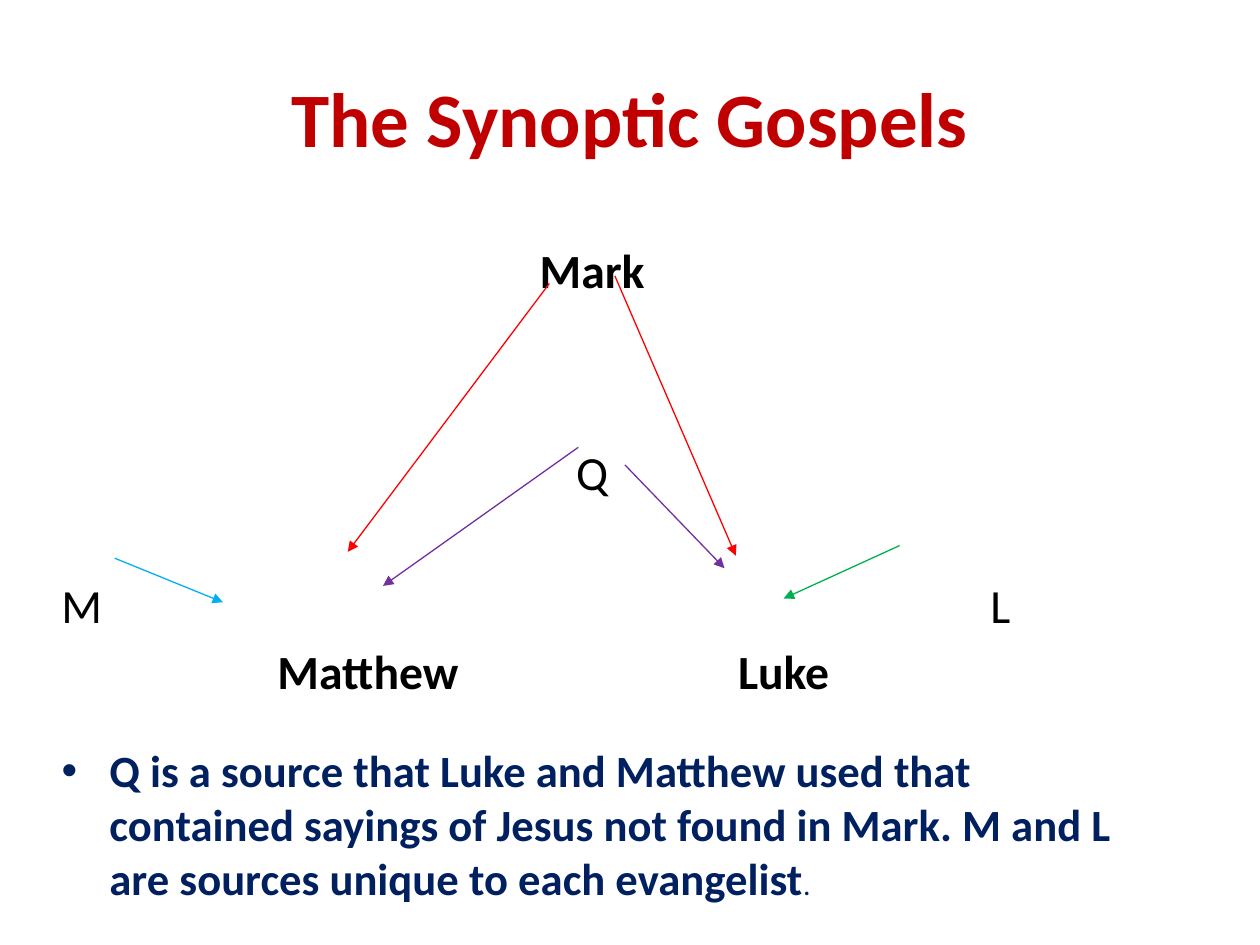
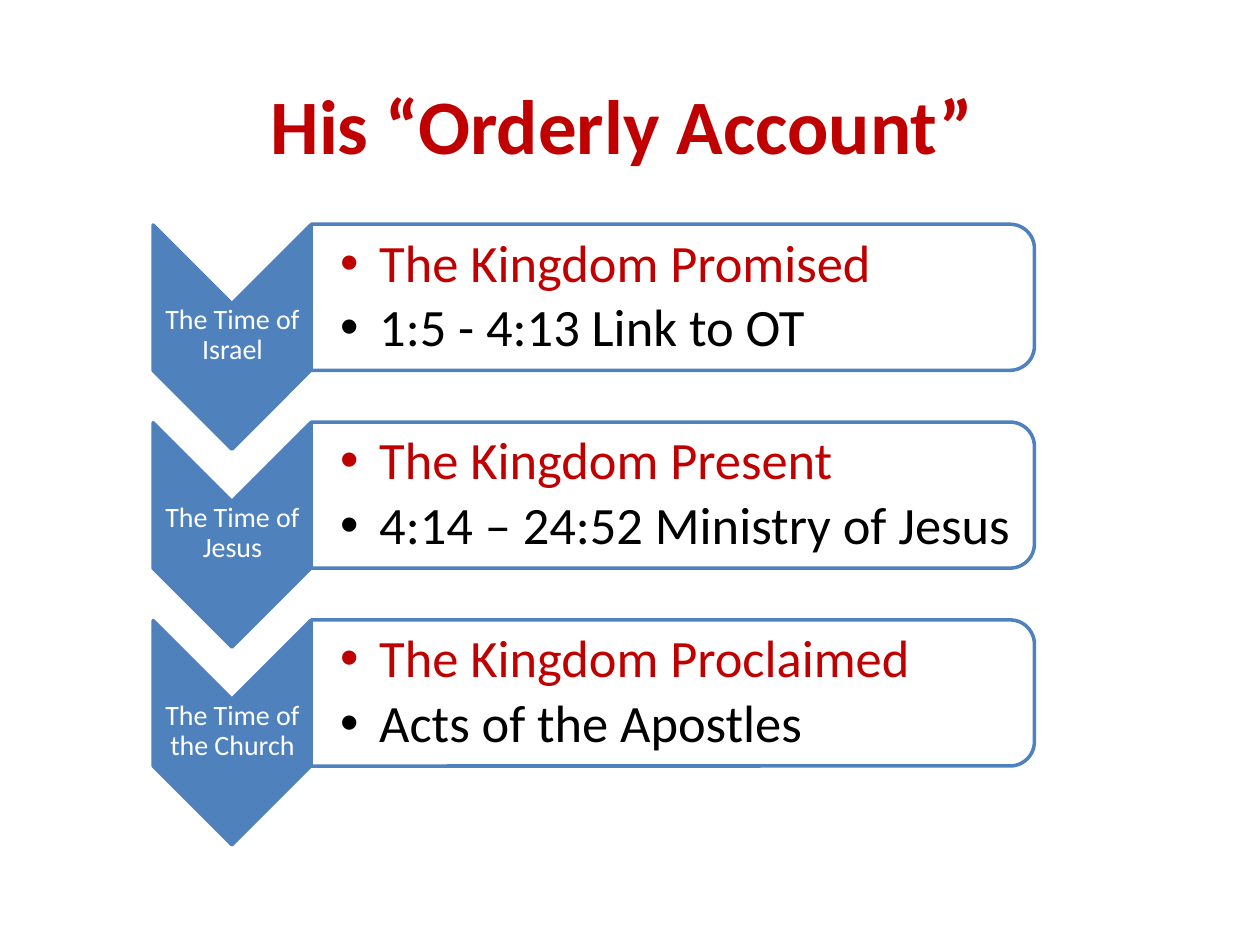
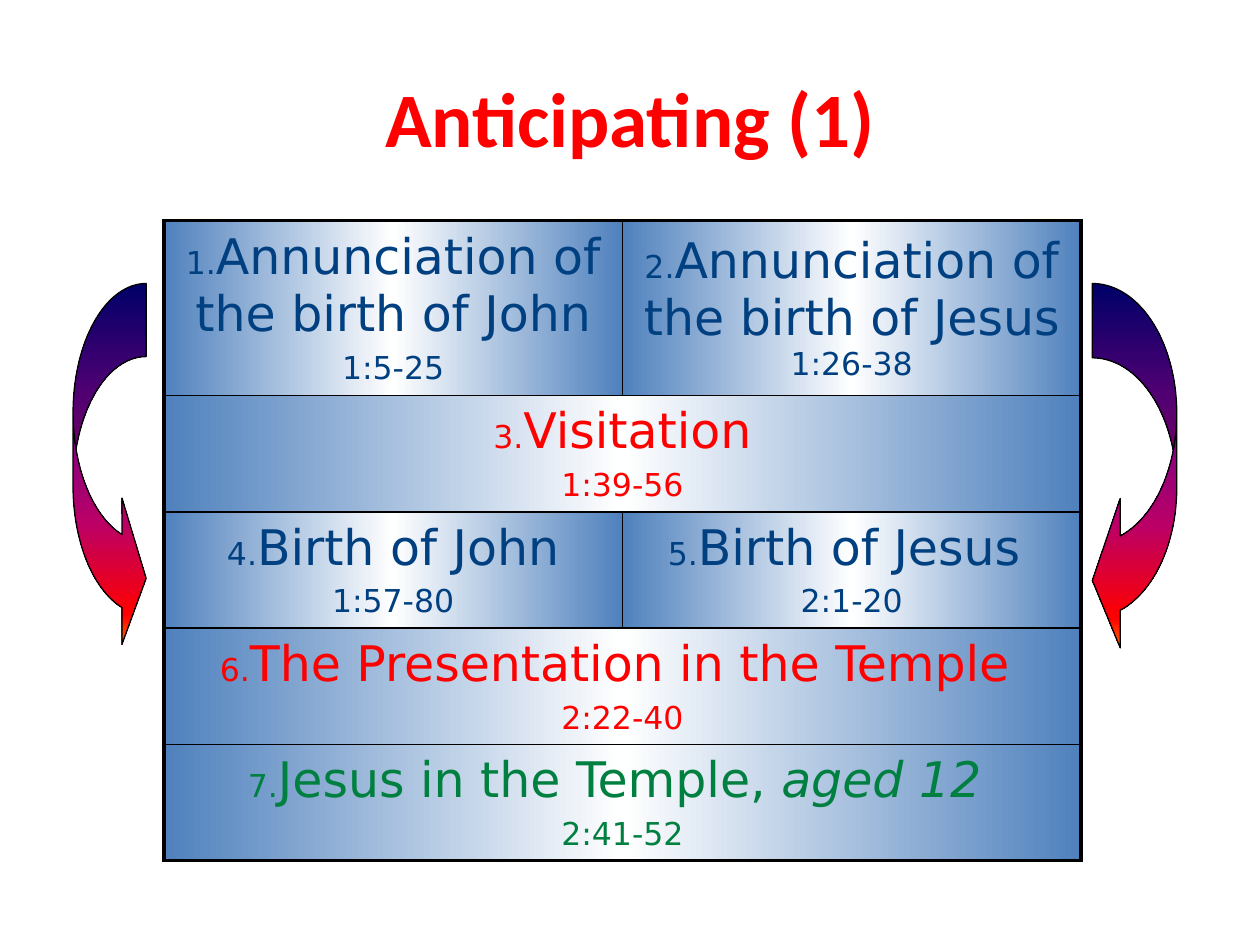
from lxml import etree
from pptx import Presentation
from pptx.dml.color import RGBColor
from pptx.enum import shapes, text
from pptx.oxml import ns
from pptx.util import Inches, Pt

HUES = {
    "title": "C00000", "red": "FF0000", "black": "000000", "white": "FFFFFF",
    "navy": "002060", "violet": "7030A0", "sky": "00B0F0", "leaf": "00B050",
    "blue": "4F81BD", "ink": "004080", "green": "008040",
}
SHEEN = [(0, HUES["blue"]), (50, HUES["white"]), (100, HUES["blue"])]
BLAZE = [(0, "000082"), (30, "66008F"), (65, "BA0066"), (90, "FF0000"), (100, "FF8200")]
MID = text.PP_ALIGN.CENTER
LEFT = text.PP_ALIGN.LEFT
FORM = shapes.MSO_SHAPE


def rgb(hue):
    return RGBColor.from_string(HUES[hue])


def sub(node, tag, **attrs):
    return etree.SubElement(node, ns.qn(tag), attrs)


def write(par, words, size=18, hue="black", bold=False, slant=False, font="Calibri"):
    run = par.add_run()
    run.text = words
    face = run.font
    face.name, face.size = font, Pt(size)
    face.bold, face.italic = bold, slant
    face.color.rgb = rgb(hue)


def box(slide, area, pads=(0.1, 0.05, 0.1, 0.05), middle=True):
    frame = slide.shapes.add_textbox(*map(Inches, area)).text_frame
    frame.word_wrap = True
    frame.margin_left, frame.margin_top, frame.margin_right, frame.margin_bottom = map(Inches, pads)
    frame.vertical_anchor = text.MSO_ANCHOR.MIDDLE if middle else text.MSO_ANCHOR.TOP
    return frame


def label(slide, words, area, pads=(0.1, 0.05, 0.1, 0.05), space=1, **look):
    par = box(slide, area, pads).paragraphs[0]
    par.alignment, par.line_spacing = MID, space
    write(par, words, **look)


def title(slide, words, left=0.5, top=0.3, hue="title"):
    label(slide, words, (left, top, 9, 1.25), size=44, hue=hue, bold=True)


def bullet(par, dent):
    par.alignment = LEFT
    props = par._p.get_or_add_pPr()
    props.set("marL", str(Inches(dent)))
    props.set("indent", str(-Inches(dent)))
    sub(props, "a:buFont", typeface="Arial")
    sub(props, "a:buChar", char="•")


def arrow(slide, start, end, hue):
    line = slide.shapes.add_connector(
        shapes.MSO_CONNECTOR.STRAIGHT, *map(Inches, start + end))
    line.line.color.rgb = rgb(hue)
    line.line.width = Pt(0.75)
    sub(line.line._get_or_add_ln(), "a:tailEnd", type="triangle")
    sub(line._element.spPr, "a:effectLst")


def shape(slide, kind, area, edge, width):
    item = slide.shapes.add_shape(kind, *map(Inches, area))
    item.shadow.inherit = False
    item.line.color.rgb = rgb(edge)
    item.line.width = Pt(width)
    return item


def blend(fill, node, stops, angle):
    fill.gradient()
    fill.gradient_angle = angle
    ramp = next(node.iter(ns.qn("a:gsLst")))
    for old in list(ramp):
        ramp.remove(old)
    for place, code in stops:
        stop = sub(ramp, "a:gs", pos=str(place * 1000))
        sub(stop, "a:srgbClr", val=code)


def turned(slide, kind, area, fill):
    item = shape(slide, kind, area, "blue", 2)
    item.rotation = 90
    item.fill.solid()
    item.fill.fore_color.rgb = rgb(fill)


def stage(slide, drop, era, theme, verse):
    turned(slide, FORM.CHEVRON, (0.95, 2.05 + drop, 1.78, 1.25), "blue")
    label(slide, era, (1.22, 2.4 + drop, 1.25, 0.53), pads=(0.01,) * 4,
          space=0.9, size=16, hue="white")
    turned(slide, FORM.ROUND_2_SAME_RECTANGLE, (4.76, drop - 0.51, 1.16, 5.74), "white")
    frame = box(slide, (2.47, 1.84 + drop, 5.68, 1.04), (0.23, 0.02, 0.02, 0.02))
    for par, words, hue in ((frame.paragraphs[0], theme, "title"),
                            (frame.add_paragraph(), verse, "black")):
        par.line_spacing, par.space_after = 0.9, Pt(4.5)
        bullet(par, 0.31)
        write(par, words, size=30, hue=hue)


def border(cell, sides):
    props = cell._tc.get_or_add_tcPr()
    for spot, (side, width) in enumerate(sides):
        line = etree.Element(ns.qn("a:ln" + side), w=str(Pt(width)))
        sub(sub(line, "a:solidFill"), "a:srgbClr", val=HUES["black"])
        props.insert(spot, line)


def fill_cell(cell, number, event, verse, hue, aside="", inline=False):
    cell.vertical_anchor = text.MSO_ANCHOR.MIDDLE
    par = cell.text_frame.paragraphs[0]
    par.alignment = MID
    look = {"hue": hue, "font": "DejaVu Sans"}
    write(par, number, **look)
    write(par, event, size=28, **look)
    if aside:
        write(par, aside, size=28, slant=True, **look)
    if inline:
        write(par, " " + verse, **look)
        return
    par = cell.text_frame.add_paragraph()
    par.alignment, par.space_before = MID, Pt(4)
    write(par, verse, **look)


def events(slide, rows):
    heights = [1.38] + [0.92] * (len(rows) - 1)
    area = (1.3, 1.75, 7.28, sum(heights))
    grid = slide.shapes.add_table(len(rows), 2, *map(Inches, area)).table
    last = len(rows) - 1
    for r, (row, height) in enumerate(zip(rows, heights)):
        grid.rows[r].height = Inches(height)
        if len(row) == 1:
            grid.cell(r, 0).merge(grid.cell(r, 1))
        for c in range(2):
            cell = grid.cell(r, c)
            blend(cell.fill, cell._tc, SHEEN, 0)
            thick = {"L": c == 0, "R": c == 1 or len(row) == 1,
                     "T": r == 0, "B": r == last}
            border(cell, [(side, 2.25 if on else 1) for side, on in thick.items()])
        for c, entry in enumerate(row):
            fill_cell(grid.cell(r, c), **entry)


def swoop(slide, area, bends, flip=False):
    item = shape(slide, FORM.CURVED_RIGHT_ARROW, area, "black", 0.75)
    for spot, bend in enumerate(bends):
        item.adjustments[spot] = bend
    blend(item.fill, item._element.spPr, BLAZE, 270)
    if flip:
        item._element.spPr.xfrm.set("flipH", "1")


def entry(number, event, verse, hue, **more):
    return dict(number=number, event=event, verse=verse, hue=hue, **more)


def gospels(slide):
    title(slide, "The Synoptic Gospels")
    for words, x, y, bold in (
            ("Mark", 4.7, 2.14, True), ("Q", 4.7, 3.74, False),
            ("M", 0.65, 4.8, False), ("L", 7.94, 4.8, False),
            ("Matthew", 2.92, 5.32, True), ("Luke", 6.22, 5.32, True)):
        label(slide, words, (x - 0.9, y - 0.28, 1.8, 0.56), size=27.2, bold=bold)
    par = box(slide, (0.39, 5.85, 8.62, 1.4), middle=False).paragraphs[0]
    bullet(par, 0.38)
    write(par, "Q is a source that Luke and Matthew used that contained sayings of Jesus "
          "not found in Mark. M and L are sources unique to each evangelist",
          size=25.5, hue="navy", bold=True)
    write(par, ".", size=17, hue="navy")
    for start, end, hue in (
            ((4.36, 2.25), (2.76, 4.38), "red"), ((4.88, 2.19), (5.84, 4.41), "red"),
            ((4.59, 3.55), (3.04, 4.65), "violet"), ((4.96, 3.69), (5.75, 4.51), "violet"),
            ((0.91, 4.43), (1.77, 4.78), "sky"), ((7.14, 4.33), (6.22, 4.75), "leaf")):
        arrow(slide, start, end, hue)


def account(slide):
    title(slide, "His “Orderly Account” ", 0.51, 0.36)
    for step, words in enumerate((
            ("The Time of Israel", "The Kingdom Promised", "1:5 - 4:13 Link to OT"),
            ("The Time of Jesus", "The Kingdom Present", "4:14 – 24:52 Ministry of Jesus"),
            ("The Time of the Church", "The Kingdom Proclaimed", "Acts of the Apostles"))):
        stage(slide, step * 1.57, *words)


def waiting(slide):
    title(slide, "Anticipating (1)", hue="red")
    events(slide, [
        [entry("1.", "Annunciation of the birth of John", "1:5-25", "ink"),
         entry("2.", "Annunciation of the birth of Jesus", "1:26-38", "ink", inline=True)],
        [entry("3.", "Visitation", "1:39-56", "red")],
        [entry("4.", "Birth of John", "1:57-80", "ink"),
         entry("5.", "Birth of Jesus ", "2:1-20", "ink")],
        [entry("6.", "The Presentation in the Temple ", "2:22-40", "red")],
        [entry("7.", "Jesus in the Temple, ", "2:41-52", "green", aside="aged 12 ")],
    ])
    swoop(slide, (0.58, 2.25, 0.58, 2.92), (1, 2, 0.33))
    swoop(slide, (8.67, 2.25, 0.67, 2.95), (0.88, 1.77, 0.33), flip=True)


def main():
    deck = Presentation()
    deck.slide_width, deck.slide_height = Inches(10), Inches(7.5)
    for build in (gospels, account, waiting):
        build(deck.slides.add_slide(deck.slide_layouts[6]))
    deck.save("out.pptx")


if __name__ == "__main__":
    main()
